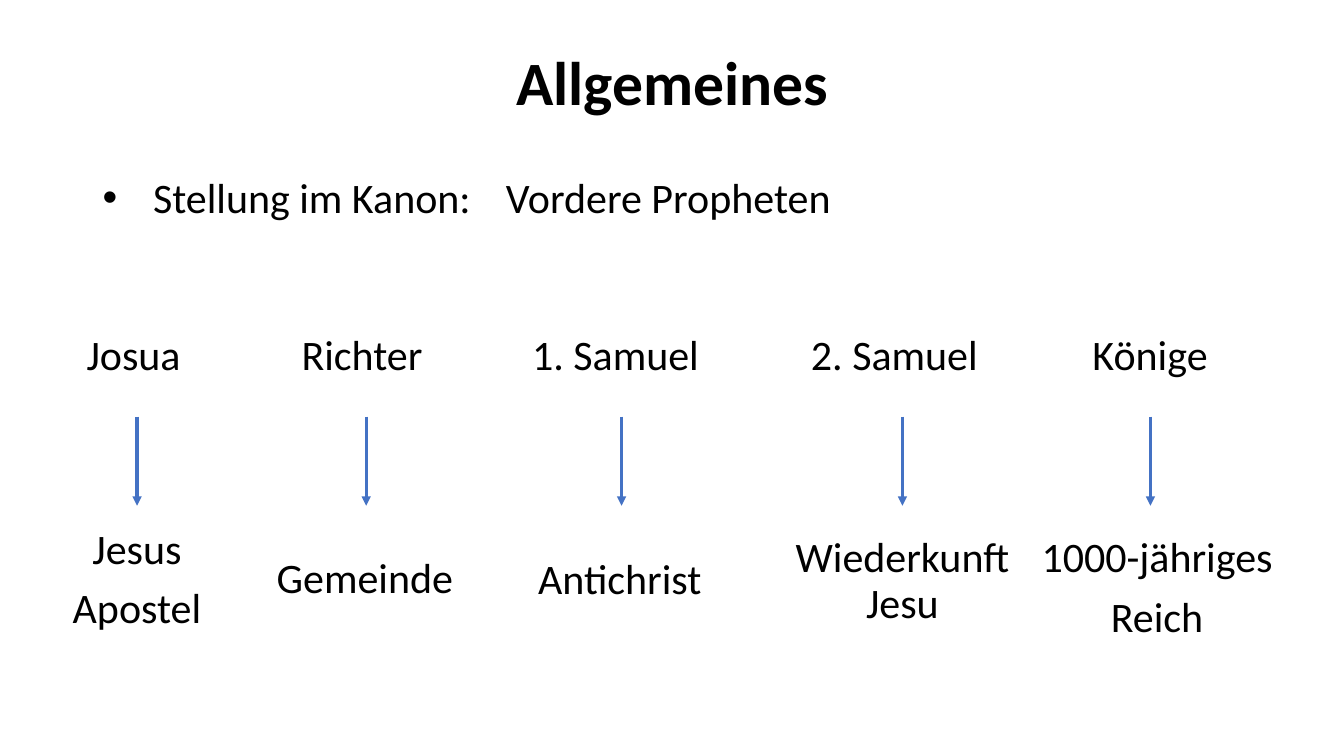
from dataclasses import dataclass

from pptx import Presentation
from pptx.dml.color import RGBColor
from pptx.enum.shapes import MSO_CONNECTOR
from pptx.enum.text import MSO_ANCHOR, MSO_AUTO_SIZE, PP_ALIGN
from pptx.oxml.ns import qn
from pptx.util import Inches, Pt
from lxml.etree import SubElement


@dataclass(frozen=True)
class Theme:
    """Colours, type sizes and line weight of the slide."""
    font: str = "Calibri"
    ink: RGBColor = RGBColor(0, 0, 0)
    arrow: RGBColor = RGBColor(0x44, 0x72, 0xC4)
    title: int = 44
    body: int = 30
    weight: float = 2.25


def write(frame, text, theme, size, bold=False, align=PP_ALIGN.LEFT, before=0,
          anchor=MSO_ANCHOR.TOP, bullet=False):
    """Fill a text frame, one paragraph per line, and format it."""
    frame.word_wrap = True
    frame.auto_size = MSO_AUTO_SIZE.NONE
    frame.vertical_anchor = anchor
    for i, line in enumerate(text.split("\n")):
        para = frame.add_paragraph() if i else frame.paragraphs[0]
        para.text = line
        para.alignment = align
        para.line_spacing = 0.9
        para.space_before = Pt(before)
        if bullet:
            props = para._p.get_or_add_pPr()
            props.set("marL", str(Inches(0.5)))
            props.set("indent", str(-Inches(0.5)))
            SubElement(props, qn("a:buFont"), typeface="Arial")
            SubElement(props, qn("a:buChar"), char="•")
        for run in para.runs:
            run.font.name = theme.font
            run.font.size = Pt(size)
            run.font.bold = bold
            run.font.color.rgb = theme.ink


class Board:
    """Draws on one slide, in a grid of 100 columns by 100 rows."""

    def __init__(self, deck, theme):
        self.theme = theme
        self.col = deck.slide_width / 100
        self.row = deck.slide_height / 100
        self.slide = deck.slides.add_slide(deck.slide_layouts[5])

    def place(self, x, y, *size):
        """Turn grid columns and rows into slide lengths."""
        steps = (self.col, self.row) * 2
        return [round(n * step) for n, step in zip((x, y, *size), steps)]

    def title(self, text, *area):
        """Move and fill the title placeholder."""
        head = self.slide.shapes.title
        head.left, head.top, head.width, head.height = self.place(*area)
        write(head.text_frame, text, self.theme, self.theme.title, bold=True,
              align=PP_ALIGN.CENTER, anchor=MSO_ANCHOR.MIDDLE)

    def text(self, text, *area, **style):
        """Add a box of body text."""
        box = self.slide.shapes.add_textbox(*self.place(*area))
        write(box.text_frame, text, self.theme, self.theme.body, before=10, **style)

    def arrow(self, x, top, end):
        """Add an arrow that points down."""
        line = self.slide.shapes.add_connector(
            MSO_CONNECTOR.STRAIGHT, *self.place(x, top, x, end))
        line.line.color.rgb = self.theme.arrow
        line.line.width = Pt(self.theme.weight)
        SubElement(line.line._get_or_add_ln(), qn("a:tailEnd"), type="triangle")
        SubElement(line._element.spPr, qn("a:effectLst"))


LANES = [
    (10.2, 10.2, ("Josua", 9, 43.6), ("Jesus\nApostel", 13.9, 69.2, 15.3)),
    (27.25, 27.25, ("Richter", 11.1, 43.6), ("Gemeinde", 14.8, 73.1, 7.5)),
    (46.25, 46.25, ("1. Samuel", 14.8, 43.6), ("Antichrist", 13.9, 73.2, 7.5)),
    (67.15, 67.15, ("2. Samuel", 15.1, 43.6), ("Wiederkunft\vJesu", 20.4, 70.3, 13.5)),
    (86.1, 85.6, ("Könige", 11.1, 43.5), ("1000-jähriges\nReich", 19.1, 70.3, 15.3)),
]


def main():
    """Build and save the slide."""
    deck = Presentation()
    deck.slide_width, deck.slide_height = Inches(13.33), Inches(7.5)
    board = Board(deck, Theme())
    board.title("Allgemeines", 6.9, 5.3, 86.25, 11.9)
    board.text("Stellung im Kanon:\tVordere Propheten", 6.9, 22.8, 57.5, 19.5, bullet=True)
    for mid, stem, (book, wide, top), (sense, span, base, high) in LANES:
        many = "\n" in sense or "\v" in sense
        board.text(book, mid - wide / 2, top, wide, 7.5)
        board.arrow(stem, 55.1, 66.9)
        board.text(sense, mid - span / 2, base, span, high,
                   align=PP_ALIGN.CENTER if many else PP_ALIGN.LEFT)
    deck.save("out.pptx")


if __name__ == "__main__":
    main()
